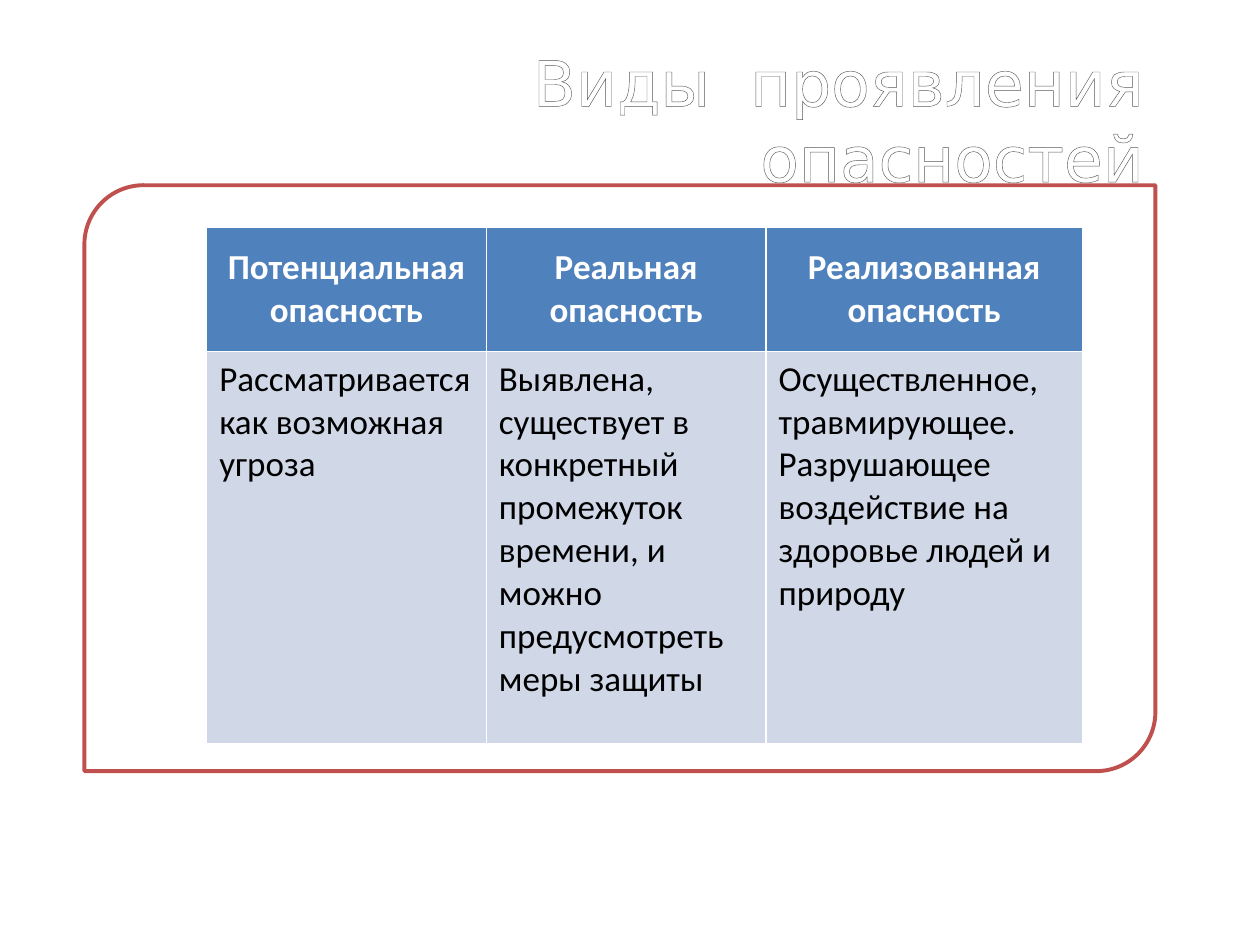
"""Build a slide with a table of the ways in which hazards show themselves."""
from dataclasses import dataclass

from lxml import etree
from pptx import Presentation
from pptx.dml.color import RGBColor
from pptx.enum.shapes import MSO_SHAPE
from pptx.enum.text import MSO_ANCHOR, PP_ALIGN
from pptx.oxml.ns import qn
from pptx.util import Inches, Pt

FRAME_SHAPE = MSO_SHAPE.ROUND_2_DIAG_RECTANGLE
MIDDLE, TOP = MSO_ANCHOR.MIDDLE, MSO_ANCHOR.TOP
LEFT, CENTER, RIGHT = PP_ALIGN.LEFT, PP_ALIGN.CENTER, PP_ALIGN.RIGHT
TITLE_ONLY = 5

COLORS = {
    "white": "FFFFFF",
    "black": "000000",
    "outline": "595959",
    "frame": "C0504D",
    "header": "4F81BD",
    "body": "D0D8E8",
}


@dataclass(frozen=True)
class Hazard:
    name: str
    description: str
    width: float


@dataclass(frozen=True)
class CellStyle:
    fill: str
    color: str
    bold: bool
    align: PP_ALIGN
    anchor: MSO_ANCHOR


HAZARDS = [
    Hazard("Потенциальная опасность", "Рассматривается как возможная угроза", 2.22),
    Hazard(
        "Реальная опасность",
        "Выявлена, существует в конкретный промежуток времени, "
        "и можно предусмотреть меры защиты",
        2.22,
    ),
    Hazard(
        "Реализованная опасность",
        "Осуществленное, травмирующее. Разрушающее воздействие "
        "на здоровье людей и природу",
        2.51,
    ),
]
HEADER = CellStyle("header", "white", True, CENTER, MIDDLE)
BODY = CellStyle("body", "black", False, LEFT, TOP)
ROW_HEIGHTS = (0.99, 3.11)


def rgb(name: str) -> RGBColor:
    return RGBColor.from_string(COLORS[name])


def outline_run(r, color: str, width: float) -> None:
    ln = etree.Element(qn("a:ln"), w=str(Pt(width)))
    fill = etree.SubElement(ln, qn("a:solidFill"))
    etree.SubElement(fill, qn("a:srgbClr"), val=COLORS[color])
    r.font._element.insert(0, ln)


def add_title(s, text: str) -> None:
    sp = s.shapes.title
    sp.left, sp.top = Inches(2.09), Inches(0.29)
    sp.width, sp.height = Inches(7.09), Inches(1.31)
    tf = sp.text_frame
    tf.text = text
    tf.word_wrap = True
    tf.vertical_anchor = MIDDLE
    p = tf.paragraphs[0]
    p.alignment = RIGHT
    r = p.runs[0]
    r.font.name = "DejaVu Sans"
    r.font.size = Pt(36)
    r.font.color.rgb = rgb("white")
    outline_run(r, "outline", 1.45)


def add_frame(s) -> None:
    sp = s.shapes.add_shape(
        FRAME_SHAPE, Inches(0.67), Inches(1.47), Inches(8.5), Inches(4.65)
    )
    sp.adjustments[0] = 0.101
    sp.adjustments[1] = 0
    sp.shadow.inherit = False
    sp.fill.solid()
    sp.fill.fore_color.rgb = rgb("white")
    sp.line.color.rgb = rgb("frame")
    sp.line.width = Pt(2.25)


def fill_cell(cell, text: str, style: CellStyle) -> None:
    cell.fill.solid()
    cell.fill.fore_color.rgb = rgb(style.fill)
    cell.vertical_anchor = style.anchor
    cell.text_frame.text = text
    p = cell.text_frame.paragraphs[0]
    p.alignment = style.align
    r = p.runs[0]
    r.font.name = "Calibri"
    r.font.size = Pt(20)
    r.font.bold = style.bold
    r.font.color.rgb = rgb(style.color)


def add_hazard_table(s, hazards: list[Hazard]) -> None:
    width = sum(hazard.width for hazard in hazards)
    table = s.shapes.add_table(
        len(ROW_HEIGHTS), len(hazards), Inches(1.64), Inches(1.8),
        Inches(width), Inches(sum(ROW_HEIGHTS)),
    ).table
    for row, height in zip(table.rows, ROW_HEIGHTS):
        row.height = Inches(height)
    for col, hazard in enumerate(hazards):
        table.columns[col].width = Inches(hazard.width)
        fill_cell(table.cell(0, col), hazard.name, HEADER)
        fill_cell(table.cell(1, col), hazard.description, BODY)


def main() -> None:
    prs = Presentation()
    prs.slide_width, prs.slide_height = Inches(10), Inches(7.5)
    s = prs.slides.add_slide(prs.slide_layouts[TITLE_ONLY])
    add_title(s, "Виды  проявления опасностей")
    add_frame(s)
    add_hazard_table(s, HAZARDS)
    prs.save("out.pptx")


if __name__ == "__main__":
    main()
